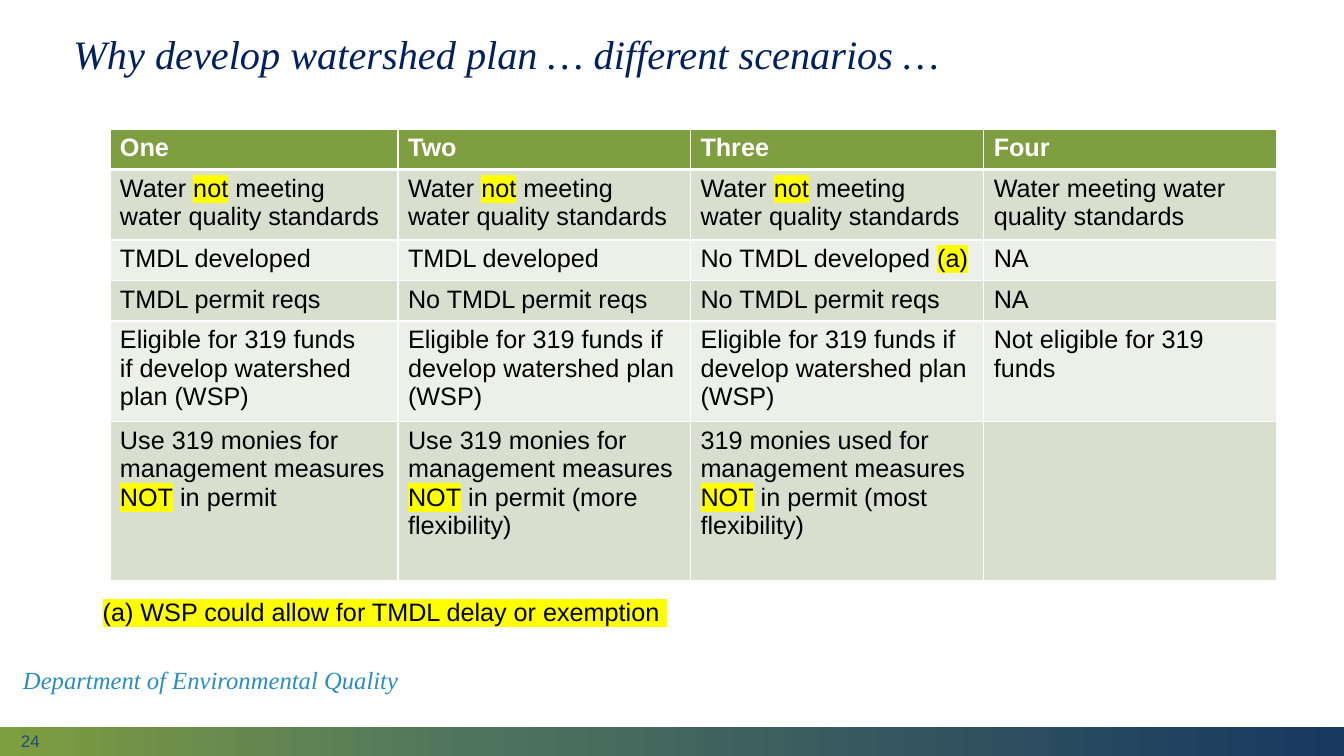
import pptx
import pptx.util
import pptx.dml.color
import pptx.enum.shapes
import pptx.enum.text
import pptx.oxml.ns
from lxml import etree
from pptx.util import Cm, Pt

# Content: asterisks enclose highlighted words, a line break starts a paragraph
TITLE = "Why develop watershed plan … different scenarios …"
DEPARTMENT = "Department of Environmental Quality"
PAGE = "24"
FOOTNOTE = "*(a) WSP could allow for TMDL delay or exemption *"
SCENARIOS = [
    ["One", "Two", "Three", "Four"],
    ["Water *not* meeting water quality standards",
     "Water *not* meeting water quality standards",
     "Water *not* meeting water quality standards",
     "Water meeting water quality standards"],
    ["TMDL developed", "TMDL developed", "No TMDL developed *(a)*", "NA"],
    ["TMDL permit reqs", "No TMDL permit reqs", "No TMDL permit reqs", "NA"],
    ["Eligible for 319 funds\nif develop watershed plan (WSP)",
     "Eligible for 319 funds if develop watershed plan (WSP)",
     "Eligible for 319 funds if develop watershed plan (WSP)",
     "Not eligible for 319 funds"],
    ["Use 319 monies for management measures *NOT* in permit",
     "Use 319 monies for management measures *NOT* in permit (more flexibility)",
     "319 monies used for management measures *NOT* in permit (most flexibility)",
     ""],
]
COL_WIDTHS = [7.26, 7.37, 7.39, 7.39]
ROW_HEIGHTS = [1.02, 1.75, 1.02, 1.02, 2.51, 4.01]
HEADER_FILL, BAND_FILLS = "7F9E3F", ["ECF0E8", "D8DFCF"]
FOOTER_STOPS = [(0, "7F9E3F"), (35, "4F745E"), (100, "183860")]
MIDDLE = pptx.enum.text.MSO_ANCHOR.MIDDLE
TOP = pptx.enum.text.MSO_ANCHOR.TOP


def rgb(color):
    return pptx.dml.color.RGBColor.from_string(color)


def add_xml(parent, tag, **attrs):
    return etree.SubElement(parent, pptx.oxml.ns.qn(tag), attrs)


def write(tf, text, size, color, font="Arial", bold=False, italic=False, spacing=None):
    for i, line in enumerate(text.split("\n")):
        p = tf.paragraphs[0] if i == 0 else tf.add_paragraph()
        if spacing:
            p.line_spacing = spacing
        f = p.font
        f.name, f.size, f.bold, f.italic = font, Pt(size), bold, italic
        f.color.rgb = rgb(color)
        for j, part in enumerate(line.split("*")):
            if part:
                r = p.add_run()
                r.text = part
                if j % 2:
                    mark = add_xml(r._r.get_or_add_rPr(), "a:highlight")
                    add_xml(mark, "a:srgbClr", val="FFFF00")


def text_box(box, text, size, color, anchor=MIDDLE, **style):
    tf = s.shapes.add_textbox(*map(Cm, box)).text_frame
    tf.word_wrap = True
    tf.vertical_anchor = anchor
    write(tf, text, size, color, **style)


def set_borders(cell, **widths):
    tcPr = cell._tc.get_or_add_tcPr()
    for side in "LRTB":
        ln = add_xml(tcPr, "a:ln" + side, w=str(Pt(widths.get(side, 1))))
        add_xml(add_xml(ln, "a:solidFill"), "a:srgbClr", val="FFFFFF")


prs = pptx.Presentation()
prs.slide_width, prs.slide_height = Cm(33.87), Cm(19.05)
s = prs.slides.add_slide(prs.slide_layouts[6])

# Footer band with a three-colour gradient
sp = s.shapes.add_shape(pptx.enum.shapes.MSO_SHAPE.RECTANGLE,
                        0, Cm(18.31), prs.slide_width, Cm(0.74))
sp.shadow.inherit = False
sp.line.fill.background()
sp.fill.gradient()
sp.fill.gradient_angle = 0
stops = sp._element.spPr.find(".//" + pptx.oxml.ns.qn("a:gsLst"))
for stop in list(stops):
    stops.remove(stop)
for percent, color in FOOTER_STOPS:
    stop = add_xml(stops, "a:gs", pos=str(percent * 1000))
    add_xml(stop, "a:srgbClr", val=color)

# Page number, department and title
text_box((0.28, 18.47, 7.62, 0.38), PAGE, 12, "1F497D")
text_box((0.33, 16.66, 10.41, 1.04), DEPARTMENT, 17.6, "288DC2",
         font="Times New Roman", italic=True, spacing=0.9)
text_box((1.6, 0.64, 23.77, 1.55), TITLE, 28.8, "002060",
         font="Times New Roman", italic=True, spacing=0.9)

# Scenario table
table = s.shapes.add_table(len(ROW_HEIGHTS), len(COL_WIDTHS), Cm(2.77), Cm(3.25),
                           Cm(sum(COL_WIDTHS)), Cm(sum(ROW_HEIGHTS))).table
for column, width in zip(table.columns, COL_WIDTHS):
    column.width = Cm(width)
for i, texts in enumerate(SCENARIOS):
    table.rows[i].height = Cm(ROW_HEIGHTS[i])
    header = i == 0
    for j, text in enumerate(texts):
        cell = table.cell(i, j)
        set_borders(cell, T=3 if i == 1 else 1, B=3 if header else 1)
        cell.fill.solid()
        cell.fill.fore_color.rgb = rgb(HEADER_FILL if header else BAND_FILLS[i % 2])
        write(cell.text_frame, text, 18, "FFFFFF" if header else "000000", bold=header)

# Footnote
text_box((2.34, 14.91, 17.22, 1.02), FOOTNOTE, 18, "000000", anchor=TOP)

prs.save("out.pptx")
